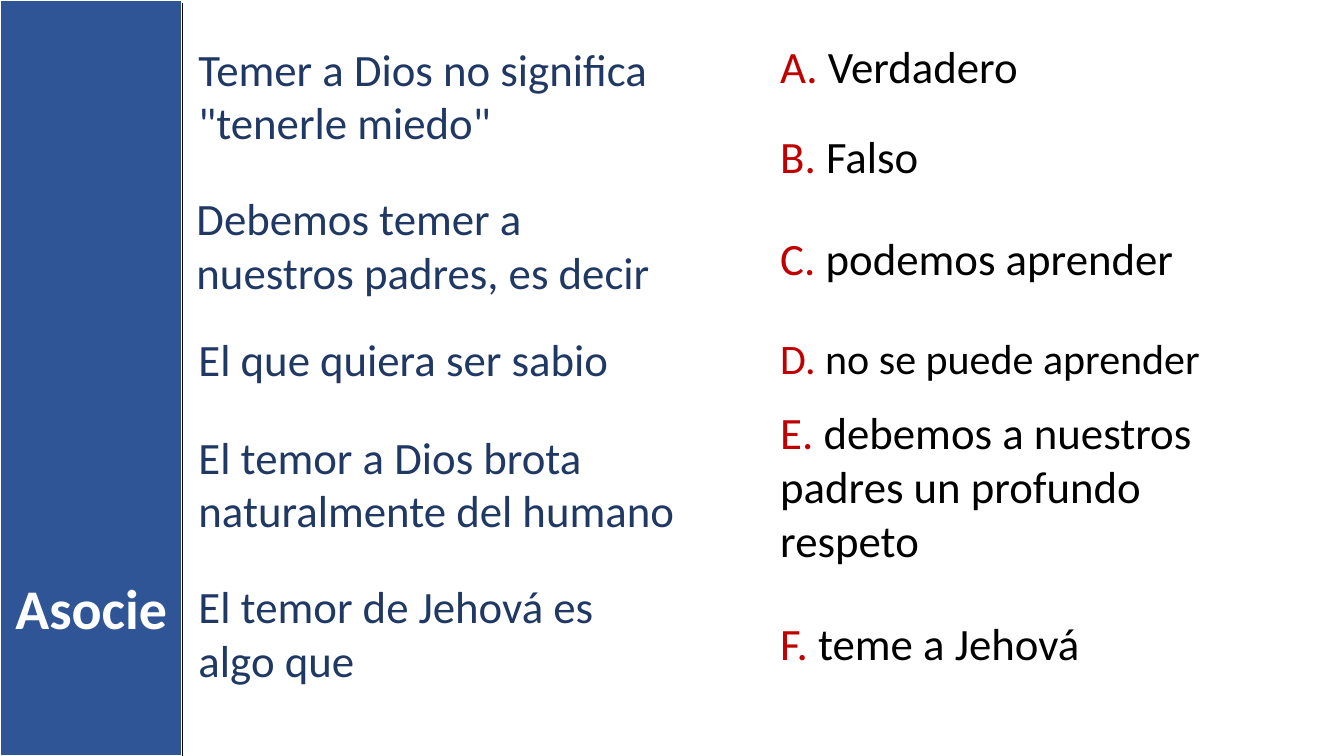
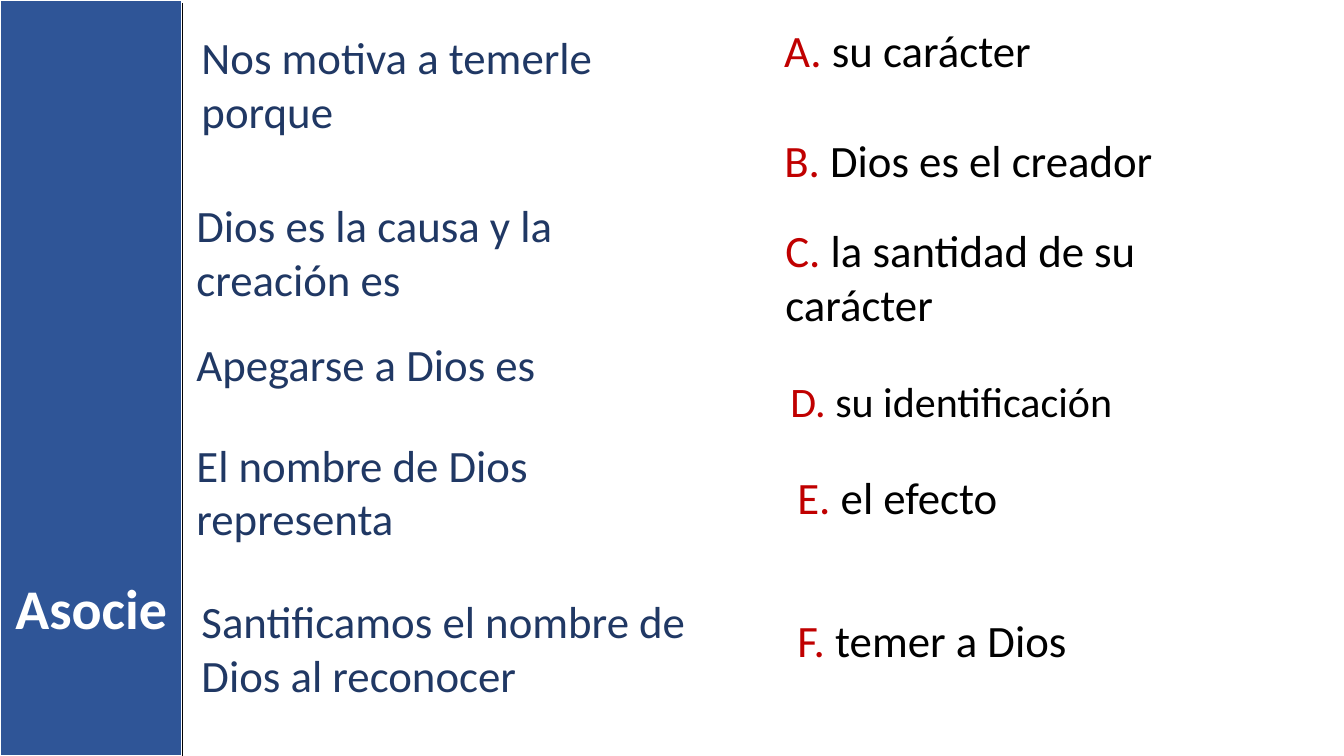
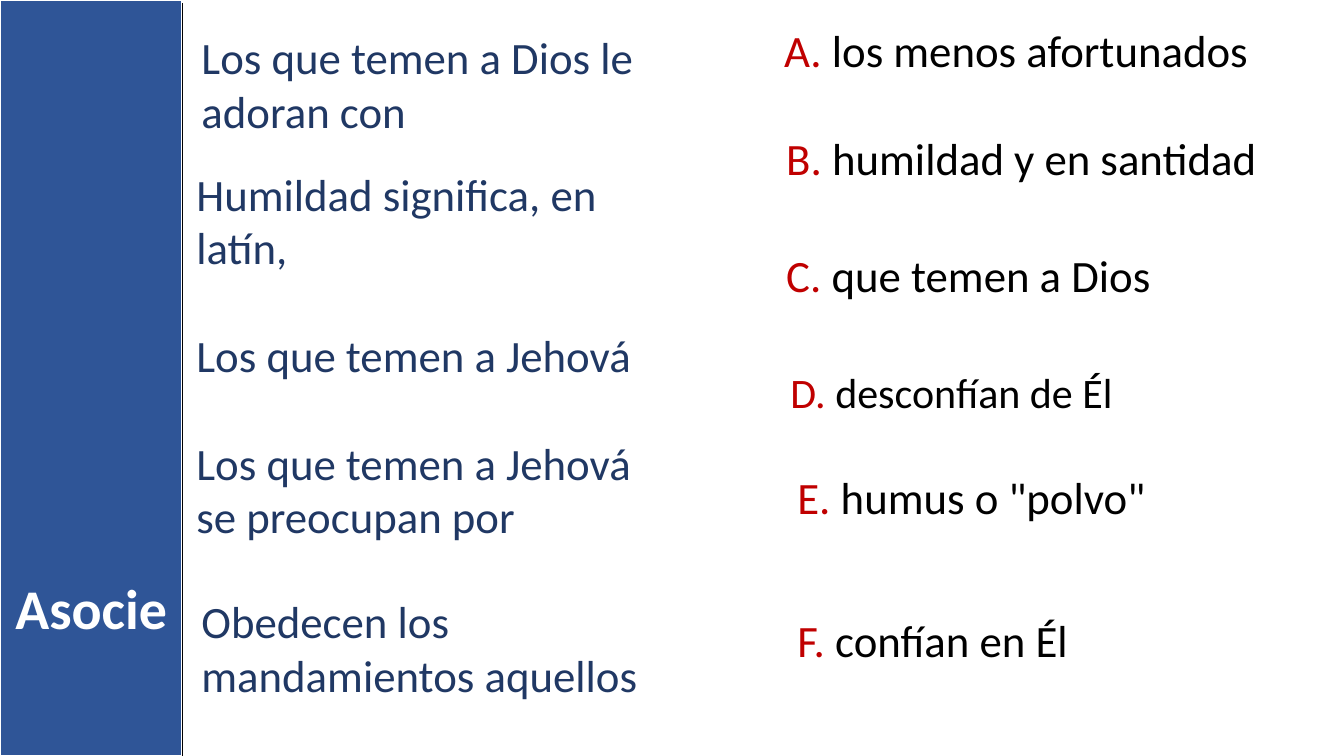
from dataclasses import dataclass

from lxml import etree
from pptx import Presentation
from pptx.dml.color import RGBColor
from pptx.enum.shapes import MSO_CONNECTOR, MSO_SHAPE
from pptx.enum.text import MSO_ANCHOR, MSO_AUTO_SIZE as AutoSize, PP_ALIGN
from pptx.oxml.ns import qn
from pptx.util import Inches, Pt


@dataclass(frozen=True)
class Theme:
    font: str = "Calibri"
    band: RGBColor = RGBColor(0x2F, 0x55, 0x97)
    prompt: RGBColor = RGBColor(0x20, 0x38, 0x64)
    letter: RGBColor = RGBColor(0xC0, 0x00, 0x00)
    black: RGBColor = RGBColor(0x00, 0x00, 0x00)
    white: RGBColor = RGBColor(0xFF, 0xFF, 0xFF)
    title_size: int = 40
    text_size: int = 32
    small_size: int = 30


THEME = Theme()
SLIDE_WIDTH, SLIDE_HEIGHT = 13.33, 7.5
BAND_WIDTH = 1.81
SMALL_LETTER = "D"  # this answer is set slightly smaller

# Prompts: left, top, width, lines, text
# Answers: left, top, width, lines, text; lettered A to F in order
EXERCISES = [
    (
        [
            (1.87, 0.36, 4.94, 2, 'Temer a Dios no significa "tenerle miedo"'),
            (1.85, 1.84, 4.81, 2, "Debemos temer a nuestros padres, es decir"),
            (1.87, 3.24, 5.1, 1, "El que quiera ser sabio"),
            (1.87, 4.21, 4.94, 2, "El temor a Dios brota naturalmente del humano"),
            (1.87, 5.69, 4.78, 2, "El temor de Jehová es algo que"),
        ],
        [
            (7.64, 0.33, 5, 1, "Verdadero"),
            (7.64, 1.23, 5.04, 1, "Falso"),
            (7.64, 2.24, 4.88, 1, "podemos aprender"),
            (7.64, 3.25, 4.57, 1, "no se puede aprender"),
            (7.64, 3.97, 5.16, 3, "debemos a nuestros padres un profundo respeto"),
            (7.64, 6.06, 4.15, 1, "teme a Jehová"),
        ],
    ),
    (
        [
            (1.9, 0.25, 5.39, 2, "Nos motiva a temerle porque"),
            (1.85, 1.91, 5.16, 2, "Dios es la causa y la creación es"),
            (1.85, 3.29, 5.1, 1, "Apegarse a Dios es"),
            (1.85, 4.29, 4.94, 2, "El nombre de Dios representa"),
            (1.9, 5.84, 5.16, 2, "Santificamos el nombre de Dios al reconocer"),
        ],
        [
            (7.68, 0.18, 5, 1, "su carácter"),
            (7.68, 1.27, 4.68, 1, "Dios es el creador"),
            (7.69, 2.16, 4.73, 2, "la santidad de su carácter"),
            (7.74, 3.68, 4.75, 1, "su identificación"),
            (7.81, 4.61, 4.91, 1, "el efecto"),
            (7.81, 6.03, 4.62, 1, "temer a Dios"),
        ],
    ),
    (
        [
            (1.9, 0.25, 5.39, 2, "Los que temen a Dios le adoran con"),
            (1.85, 1.6, 5.16, 2, "Humildad significa, en latín,"),
            (1.85, 3.2, 5.1, 1, "Los que temen a Jehová"),
            (1.85, 4.27, 4.94, 2, "Los que temen a Jehová se preocupan por"),
            (1.9, 5.84, 5.16, 2, "Obedecen los mandamientos aquellos"),
        ],
        [
            (7.68, 0.18, 5, 1, "los menos afortunados"),
            (7.7, 1.25, 5.37, 1, "humildad y en santidad"),
            (7.7, 2.41, 4.73, 1, "que temen a Dios"),
            (7.74, 3.59, 4.75, 1, "desconfían de Él"),
            (7.81, 4.61, 4.91, 1, 'humus o "polvo"'),
            (7.81, 6.03, 4.62, 1, "confían en Él"),
        ],
    ),
]


def place(shape, left, top, width, height):
    shape.left, shape.top = Inches(left), Inches(top)
    shape.width, shape.height = Inches(width), Inches(height)


def set_font(font, size, color=None, bold=False):
    font.name, font.size, font.bold = THEME.font, Pt(size), bold
    if color is not None:
        font.color.rgb = color


# Shared side band, its edge line and the title position
def build_layout(layout, page):
    """Draw the band on a page and move it to the layout, behind the title."""
    band = page.shapes.add_shape(
        MSO_SHAPE.RECTANGLE, 0, 0, Inches(BAND_WIDTH), Inches(SLIDE_HEIGHT))
    band.shadow.inherit = False
    band.fill.solid()
    band.fill.fore_color.rgb = THEME.band
    band.line.color.rgb = THEME.white
    band.line.width = Pt(1.5)

    edge = page.shapes.add_connector(
        MSO_CONNECTOR.STRAIGHT, Inches(BAND_WIDTH), Inches(0.03),
        Inches(BAND_WIDTH), Inches(SLIDE_HEIGHT))
    edge.line.color.rgb = THEME.black
    edge.line.width = Pt(1)
    etree.SubElement(edge.element.spPr, qn("a:effectLst"))

    title = next(box for box in layout.placeholders
                 if box.placeholder_format.idx == 0)
    place(title, 0, 5.64, BAND_WIDTH, 0.77)
    for shape in (band, edge):
        title.element.addprevious(shape.element)


def add_title(page, text):
    frame = page.shapes.title.text_frame
    frame.text = text
    frame.vertical_anchor = MSO_ANCHOR.TOP
    frame.auto_size = AutoSize.NONE
    para = frame.paragraphs[0]
    para.alignment = PP_ALIGN.CENTER
    set_font(para.font, THEME.title_size, THEME.white, bold=True)


def add_text(page, left, top, width, lines, spans, size):
    """Add one paragraph made of (text, color) spans."""
    height = 0.1 + lines * size / 60
    box = page.shapes.add_textbox(
        Inches(left), Inches(top), Inches(width), Inches(height))
    frame = box.text_frame
    frame.word_wrap = True
    frame.auto_size = AutoSize.SHAPE_TO_FIT_TEXT
    para = frame.paragraphs[0]
    set_font(para.font, size)
    for text, color in spans:
        span = para.add_run()
        span.text = text
        span.font.color.rgb = color


def add_exercise(page, prompts, answers):
    add_title(page, "Asocie")
    for *area, text in prompts:
        add_text(page, *area, [(text, THEME.prompt)], THEME.text_size)
    for letter, (*area, text) in zip("ABCDEF", answers):
        size = THEME.small_size if letter == SMALL_LETTER else THEME.text_size
        spans = [(f"{letter}. ", THEME.letter), (text, THEME.black)]
        add_text(page, *area, spans, size)


def main():
    deck = Presentation()
    deck.slide_width, deck.slide_height = Inches(SLIDE_WIDTH), Inches(SLIDE_HEIGHT)
    layout = deck.slide_layouts.get_by_name("Title Only")
    pages = [deck.slides.add_slide(layout) for _ in EXERCISES]
    build_layout(layout, pages[0])
    for page, (prompts, answers) in zip(pages, EXERCISES):
        add_exercise(page, prompts, answers)
    deck.save("out.pptx")


if __name__ == "__main__":
    main()
